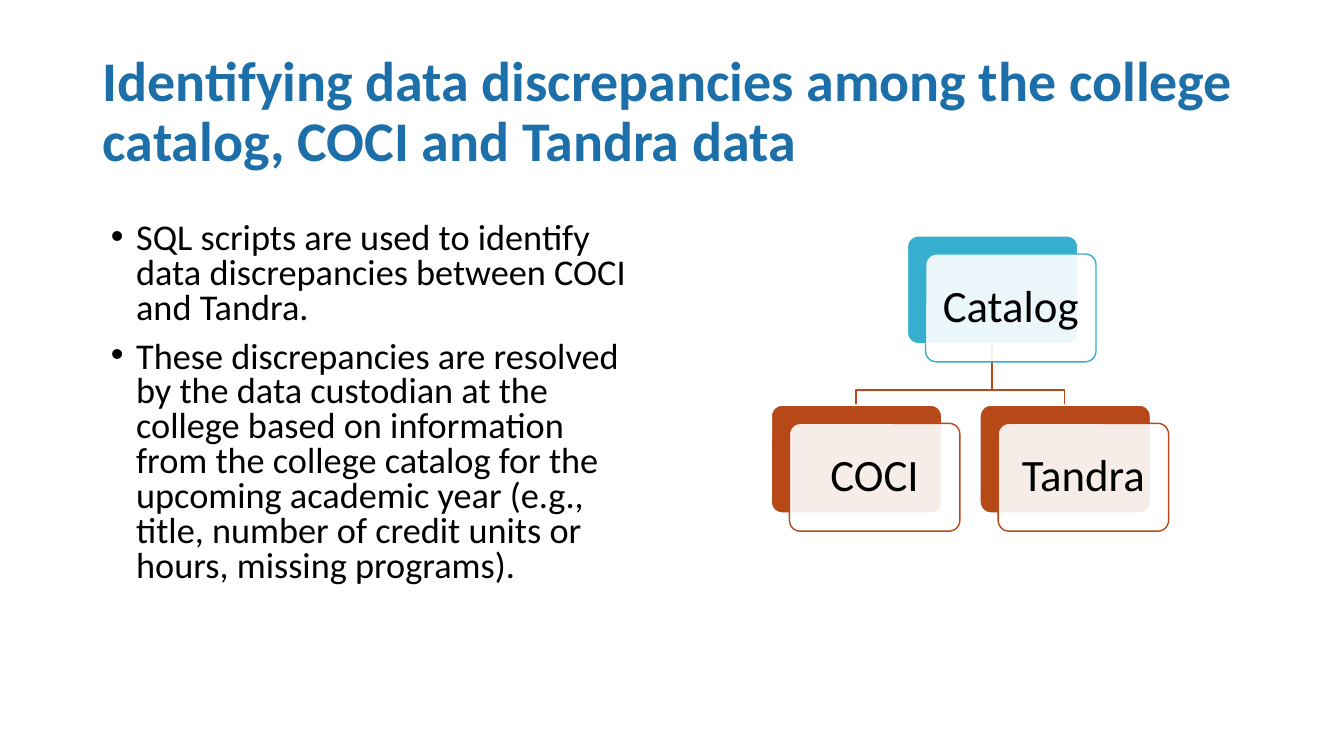
from lxml.etree import SubElement
from pptx import Presentation
from pptx.dml.color import RGBColor
from pptx.enum.shapes import MSO_SHAPE as Preset
from pptx.enum.text import MSO_ANCHOR as Anchor, MSO_AUTO_SIZE as AutoSize, PP_ALIGN as Align
from pptx.oxml.ns import qn
from pptx.util import Pt

PX = 9144
TITLE_BLUE, BLACK, WHITE = "1D6FA9", "000000", "FFFFFF"
CYAN, RUST = "36AFCE", "B74919"
CARD_W, CARD_H, FACE_SHIFT, CARD_INSET = 169, 107, 18, 13
ELBOW_DROP = 46


def color(code):
    return RGBColor.from_string(code)


class SlideBuilder:
    font = "Calibri"

    def __init__(self, deck):
        self.slide = deck.slides.add_slide(deck.slide_layouts[1])

    def add_words(self, paragraph, words, size, ink, bold=False):
        run = paragraph.add_run()
        run.text = words
        run.font.name = self.font
        run.font.size = Pt(size)
        run.font.bold = bold
        run.font.color.rgb = color(ink)

    def place(self, holder, left, top, width, height):
        holder.left, holder.top = left * PX, top * PX
        holder.width, holder.height = width * PX, height * PX
        holder.text_frame.word_wrap = True
        holder.text_frame.auto_size = AutoSize.NONE
        return holder.text_frame

    def title(self, words, *box):
        frame = self.place(self.slide.shapes.title, *box)
        frame.vertical_anchor = Anchor.MIDDLE
        heading = frame.paragraphs[0]
        heading.alignment = Align.LEFT
        heading.line_spacing = 0.9
        self.add_words(heading, words, 40, TITLE_BLUE, bold=True)

    def bullets(self, points, *box):
        frame = self.place(self.slide.placeholders[1], *box)
        frame.vertical_anchor = Anchor.TOP
        for index, words in enumerate(points):
            point = frame.add_paragraph() if index else frame.paragraphs[0]
            point.alignment = Align.LEFT
            point.line_spacing = 0.8
            point.space_before = Pt(10)
            props = point._p.get_or_add_pPr()
            props.set("marL", str(25 * PX))
            props.set("indent", str(-25 * PX))
            SubElement(props, qn("a:buFont")).set("typeface", "Arial")
            SubElement(props, qn("a:buChar")).set("char", "•")
            self.add_words(point, words, 25.9, BLACK)

    def elbow(self, start, end, ink):
        (x1, y1), (x2, y2) = start, end
        bend = y1 + ELBOW_DROP
        outline = self.slide.shapes.build_freeform(x1, y1, scale=PX)
        outline.add_line_segments([(x1, bend), (x2, bend), (x2, y2)], close=False)
        link = outline.convert_to_shape()
        link.shadow.inherit = False
        link.fill.background()
        link.line.color.rgb = color(ink)
        link.line.width = Pt(1)

    def panel(self, left, top, fill, line):
        panel = self.slide.shapes.add_shape(
            Preset.ROUNDED_RECTANGLE, left * PX, top * PX, CARD_W * PX, CARD_H * PX)
        panel.adjustments[0] = 0.1
        panel.shadow.inherit = False
        panel.fill.solid()
        panel.fill.fore_color.rgb = color(fill)
        panel.line.color.rgb = color(line)
        panel.line.width = Pt(1)
        return panel

    def card(self, label, left, top, accent):
        self.panel(left, top, accent, WHITE)
        face = self.panel(left + FACE_SHIFT, top + FACE_SHIFT, WHITE, accent)
        tint = face._element.spPr.find(qn("a:solidFill"))[0]
        SubElement(tint, qn("a:alpha")).set("val", "90000")
        frame = face.text_frame
        frame.word_wrap = True
        frame.vertical_anchor = Anchor.MIDDLE
        frame.margin_left = frame.margin_right = CARD_INSET * PX
        frame.margin_top = frame.margin_bottom = CARD_INSET * PX
        caption = frame.paragraphs[0]
        caption.alignment = Align.CENTER
        caption.line_spacing = 0.9
        self.add_words(caption, label, 32, BLACK)

    def hierarchy(self, root, children):
        label, left, top = root
        middle = CARD_W // 2
        for _, child_left, child_top in reversed(children):
            self.elbow((left + middle, top + CARD_H),
                       (child_left + middle, child_top), RUST)
        self.card(label, left, top, CYAN)
        for child in children:
            self.card(*child, RUST)


def main():
    deck = Presentation()
    deck.slide_width, deck.slide_height = 1333 * PX, 750 * PX
    page = SlideBuilder(deck)
    page.title("Identifying data discrepancies among the college catalog, "
               "COCI and Tandra data", 92, 40, 1150, 145)
    page.bullets([
        "SQL scripts are used to identify data discrepancies between COCI and Tandra.",
        "These discrepancies are resolved by the data custodian at the college based on "
        "information from the college catalog for the upcoming academic year (e.g., title, "
        "number of credit units or hours, missing programs).",
    ], 100, 216, 548, 412)
    page.hierarchy(("Catalog", 900, 234), [("COCI", 765, 402), ("Tandra", 972, 402)])
    deck.save("out.pptx")


if __name__ == "__main__":
    main()
